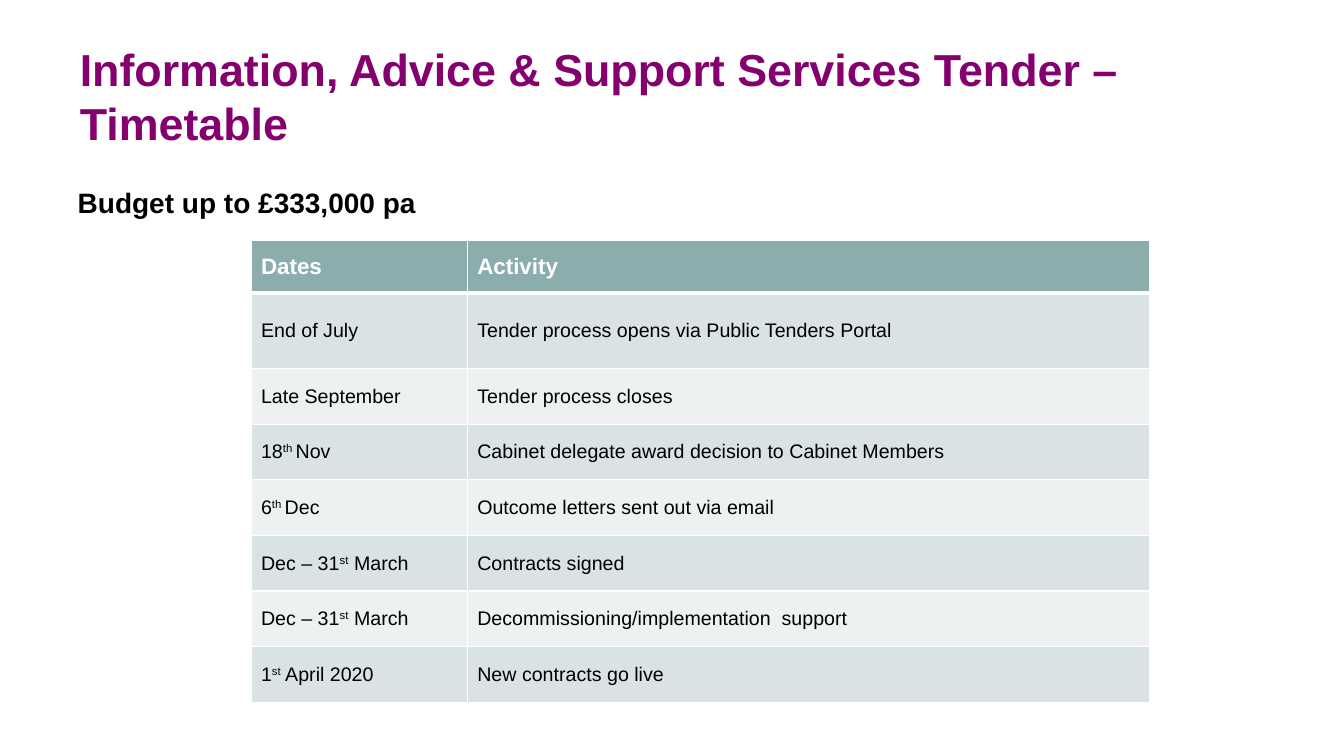
import pptx
import pptx.dml.color
import pptx.enum.text
import pptx.oxml.ns
import pptx.util
from lxml import etree

PX = 9525
FONT = "Arial"
PURPLE, BLACK, WHITE = "84006F", "000000", "FFFFFF"
HEADER_FILL, BAND_FILLS = "8CADAE", ("DAE3E3", "EEF1F2")
COLUMN_WIDTHS = (206, 650)
ROW_HEIGHTS = (50, 72) + (53,) * 6
SUPERSCRIPT_MARK = "^"
TIMETABLE = [
    ("Dates", "Activity"),
    ("End of July", "Tender process opens via Public Tenders Portal"),
    ("Late September", "Tender process closes"),
    ("18^th ^Nov", "Cabinet delegate award decision to Cabinet Members"),
    ("6^th ^Dec", "Outcome letters sent out via email"),
    ("Dec – 31^st^ March", "Contracts signed"),
    ("Dec – 31^st^ March", "Decommissioning/implementation  support"),
    ("1^st^ April 2020", "New contracts go live"),
]


def px(length):
    """Turn a length in px into EMU."""
    return pptx.util.Emu(length * PX)


def color(value):
    """Turn a hex string into a colour."""
    return pptx.dml.color.RGBColor.from_string(value)


def format_run(run, size, fill, bold):
    """Set the font of one run."""
    run.font.name = FONT
    run.font.size = pptx.util.Pt(size)
    run.font.bold = bold
    run.font.color.rgb = color(fill)


def add_heading(slide, box, text, size, fill, anchor, insets):
    """Place one bold line of text in the box."""
    shape = slide.shapes.add_textbox(*map(px, box))
    frame = shape.text_frame
    frame.word_wrap = True
    frame.vertical_anchor = anchor
    frame.margin_left = frame.margin_right = px(insets[0])
    frame.margin_top = frame.margin_bottom = px(insets[1])
    frame.text = text
    format_run(frame.paragraphs[0].runs[0], size, fill, True)


def set_borders(cell, bottom_width):
    """Draw white borders on all four sides of a cell."""
    properties = cell._tc.get_or_add_tcPr()
    for index, side in enumerate("LRTB"):
        width = bottom_width if side == "B" else 1
        line = etree.Element(pptx.oxml.ns.qn(f"a:ln{side}"), w=str(pptx.util.Pt(width)))
        fill = etree.SubElement(line, pptx.oxml.ns.qn("a:solidFill"))
        etree.SubElement(fill, pptx.oxml.ns.qn("a:srgbClr"), val=WHITE)
        properties.insert(index, line)


def fill_cell(cell, text, is_header, fill):
    """Write the text of a cell, raising the parts between marks."""
    cell.fill.solid()
    cell.fill.fore_color.rgb = color(fill)
    cell.vertical_anchor = pptx.enum.text.MSO_ANCHOR.MIDDLE
    paragraph = cell.text_frame.paragraphs[0]
    for index, part in enumerate(text.split(SUPERSCRIPT_MARK)):
        run = paragraph.add_run()
        run.text = part
        format_run(run, 16 if is_header else 14, WHITE if is_header else BLACK, is_header)
        if index % 2:
            run.font._element.set("baseline", "30000")
    set_borders(cell, 3 if is_header else 1)


def add_timetable(slide, left, top):
    """Place the table of dates and activities."""
    box = (left, top, sum(COLUMN_WIDTHS), sum(ROW_HEIGHTS))
    frame = slide.shapes.add_table(len(TIMETABLE), len(COLUMN_WIDTHS), *map(px, box))
    table = frame.table
    for column, width in zip(table.columns, COLUMN_WIDTHS):
        column.width = px(width)
    for row_index, (row, height) in enumerate(zip(table.rows, ROW_HEIGHTS)):
        row.height = px(height)
        is_header = row_index == 0
        fill = HEADER_FILL if is_header else BAND_FILLS[(row_index - 1) % 2]
        for cell, text in zip(row.cells, TIMETABLE[row_index]):
            fill_cell(cell, text, is_header, fill)


def main():
    """Build the slide and save it."""
    presentation = pptx.Presentation()
    presentation.slide_width = px(1280)
    presentation.slide_height = px(720)
    slide = presentation.slides.add_slide(presentation.slide_layouts[6])
    anchors = pptx.enum.text.MSO_ANCHOR
    add_heading(slide, (64, 31, 1152, 120),
                "Information, Advice & Support Services Tender – Timetable",
                32, PURPLE, anchors.MIDDLE, (12, 6))
    add_timetable(slide, 239, 229)
    add_heading(slide, (64, 172, 370, 42), "Budget up to £333,000 pa",
                20, BLACK, anchors.TOP, (10, 5))
    presentation.save("out.pptx")


if __name__ == "__main__":
    main()
